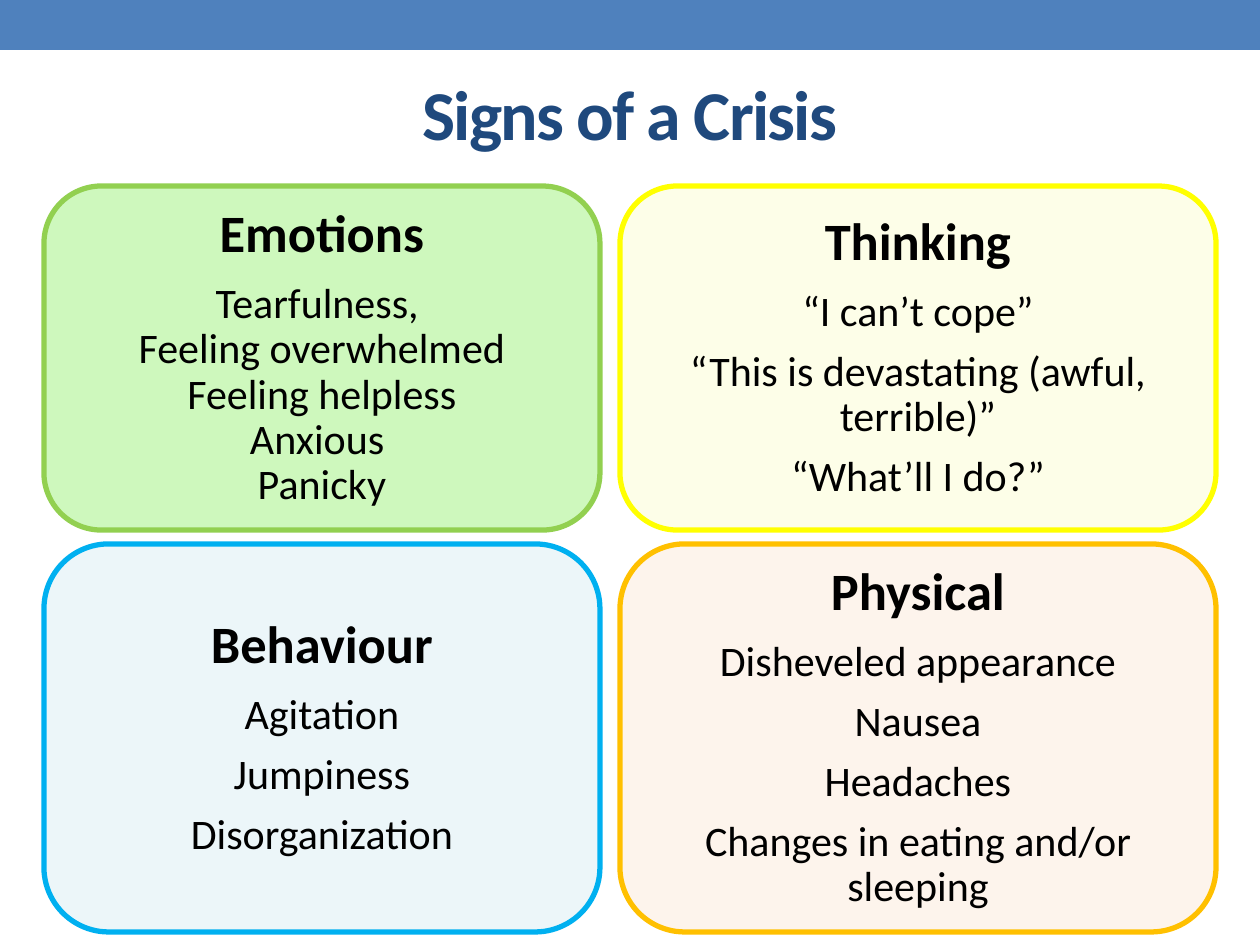
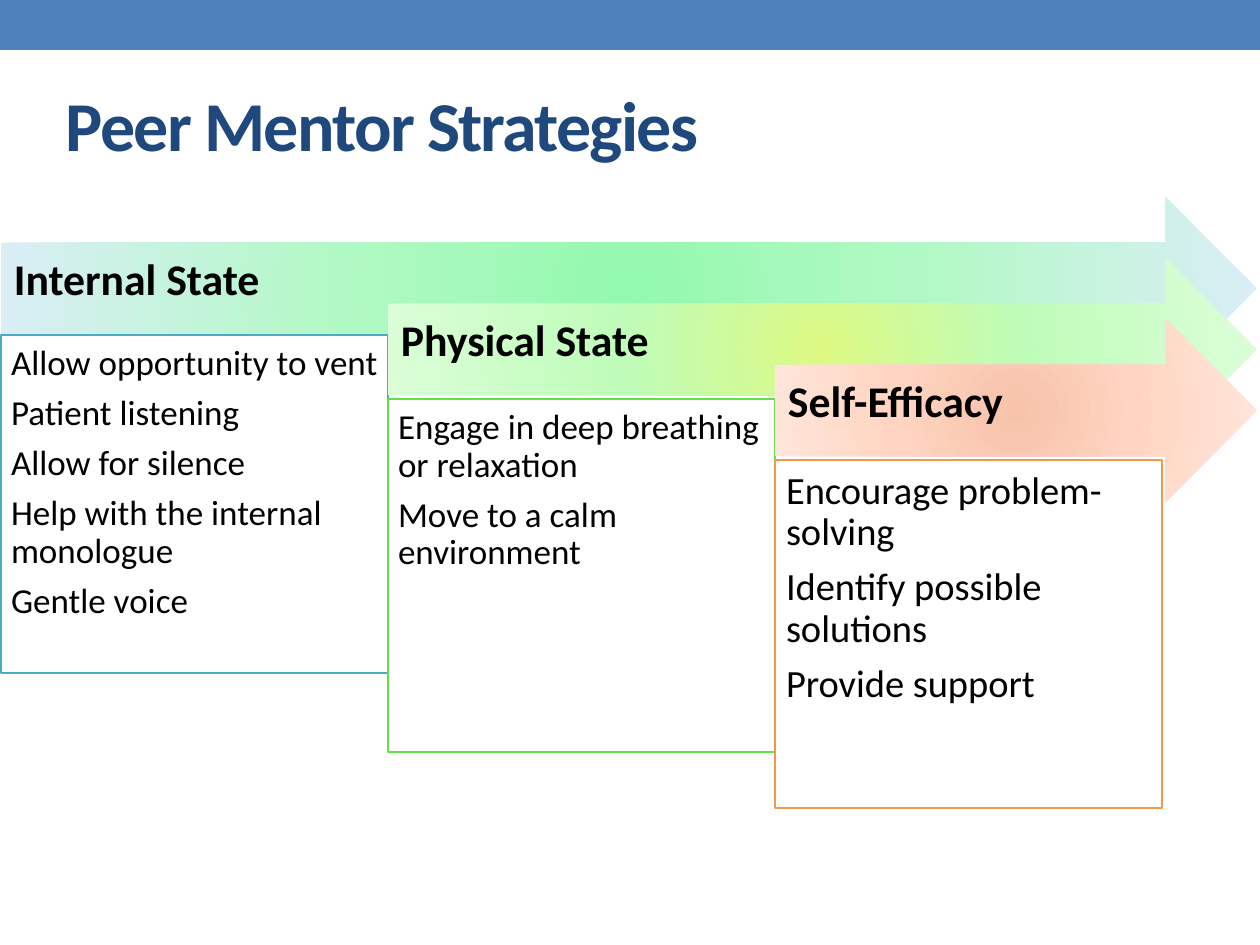
"""Build two slides on the signs of a crisis and peer mentor strategies."""
from pptx import Presentation
from pptx.dml.color import RGBColor
from pptx.enum.shapes import MSO_SHAPE
from pptx.enum.text import MSO_ANCHOR, PP_ALIGN
from pptx.oxml import parse_xml
from pptx.oxml.ns import nsdecls, qn
from pptx.util import Pt

RECT, ROUND, ARROW = MSO_SHAPE.RECTANGLE, MSO_SHAPE.ROUNDED_RECTANGLE, MSO_SHAPE.RIGHT_ARROW
LEFT, CENTER = PP_ALIGN.LEFT, PP_ALIGN.CENTER
TOP, MIDDLE = MSO_ANCHOR.TOP, MSO_ANCHOR.MIDDLE
FONT = "Calibri"
SCALE = 914400 / 126
WIDTH, HEIGHT, BAND_H = 1260, 945, 50

COLORS = {
    "band": "4F81BD", "title": "1F497D", "text": "000000", "white": "FFFFFF",
    "green": "9EF27C", "green_line": "92D050",
    "yellow": "FDFED2", "yellow_line": "FFFF00",
    "blue": "DBEEF4", "blue_line": "00B0F0",
    "orange": "FDEADA", "orange_line": "FFC000",
    "internal": "4BACC6", "physical": "60E146", "efficacy": "F79646",
}

SIGNS_TITLE = ("Signs of a Crisis", (63, 45, 1134, 136), CENTER)
SIGNS = [
    ("Emotions", "green", 0,
     ["Tearfulness, ", "Feeling overwhelmed", "Feeling helpless", "Anxious ", "Panicky"]),
    ("Thinking", "yellow", 0.35,
     ["“I can’t cope”", "“This is devastating (awful, terrible)”", "“What’ll I do?”"]),
    ("Behaviour", "blue", 0.35, ["Agitation", "Jumpiness", "Disorganization"]),
    ("Physical", "orange", 0.35,
     ["Disheveled appearance", "Nausea", "Headaches", "Changes in eating and/or sleeping"]),
]
SIGN_COLUMNS = [(44, 556), (620, 596)]
SIGN_ROWS = [(186, 344), (544, 388)]

STRATEGIES_TITLE = ("Peer Mentor Strategies", (53, 55, 1134, 136), LEFT)
STRATEGIES = [
    dict(head="Internal State", stops=("93F9AE", "B1F9C4", "DAEEF6"), line="internal",
         top=335, height=338, size=20,
         items=["Allow opportunity to vent", "Patient listening", "Allow for silence",
                "Help with the internal monologue", "Gentle voice"]),
    dict(head="Physical State", stops=("DDF983", "BFFCB9", "DBFED8"), line="physical",
         top=399, height=353, size=20,
         items=["Engage in deep breathing or relaxation", "Move to a calm environment"]),
    dict(head="Self-Efficacy", stops=("F6C2AA", "FFD4C0", "FFE7DD"), line="efficacy",
         top=460, height=348, size=22,
         items=["Encourage problem-solving", "Identify possible solutions", "Provide support"]),
]
STEP_X, STEP_Y = 387, 61
ARROW_X, ARROW_Y, ARROW_H, ARROW_RIGHT = 1, 197, 183, 1257


def px(value):
    return round(value * SCALE)


def rgb(name):
    return RGBColor.from_string(COLORS[name])


def add_shape(slide, kind, box, fill=None, line=None, weight=1):
    s = slide.shapes.add_shape(kind, *map(px, box))
    s.shadow.inherit = False
    if fill:
        s.fill.solid()
        s.fill.fore_color.rgb = rgb(fill)
    else:
        s.fill.background()
    if line:
        s.line.color.rgb = rgb(line)
        s.line.width = Pt(weight)
    else:
        s.line.fill.background()
    return s


def set_alpha(s, percent):
    color = s.fill._xPr.find(qn("a:solidFill"))[0]
    color.append(parse_xml(f'<a:alpha {nsdecls("a")} val="{percent * 1000}"/>'))


def set_radial(s, stops):
    marks = "".join(f'<a:gs pos="{pos}"><a:srgbClr val="{c}"/></a:gs>'
                    for pos, c in zip((0, 45000, 100000), stops))
    grad = parse_xml(
        f'<a:gradFill {nsdecls("a")} rotWithShape="1"><a:gsLst>{marks}</a:gsLst>'
        '<a:path path="circle"><a:fillToRect l="50000" t="50000" r="50000" b="50000"/>'
        '</a:path></a:gradFill>')
    sp_pr = s._element.spPr
    sp_pr.replace(sp_pr.find(qn("a:noFill")), grad)


def write(s, lines, anchor, align, insets, color="text", spacing=0.9):
    """Fill a shape with lines of (text, size, bold, gap as a share of size)."""
    tf = s.text_frame
    tf.word_wrap = True
    tf.vertical_anchor = anchor
    for side, inset in zip(("left", "top", "right", "bottom"), insets):
        setattr(tf, f"margin_{side}", px(inset))
    for i, (text, size, bold, gap) in enumerate(lines):
        p = tf.add_paragraph() if i else tf.paragraphs[0]
        for name, value in dict(alignment=align, line_spacing=spacing,
                                space_after=Pt(size * gap)).items():
            setattr(p, name, value)
        r = p.add_run()
        r.text = text
        for name, value in dict(name=FONT, size=Pt(size), bold=bold).items():
            setattr(r.font, name, value)
        r.font.color.rgb = rgb(color)
    return tf


def add_slide(prs, title, box, align):
    slide = prs.slides.add_slide(prs.slide_layouts[6])
    add_shape(slide, RECT, (0, 0, WIDTH, BAND_H), "band")
    s = slide.shapes.add_textbox(*map(px, box))
    tf = write(s, [(title, 40, True, 0)], MIDDLE, align, (13, 6, 13, 6), "title", 1.0)
    tf.paragraphs[0].runs[0].font._element.set("spc", "-100")
    return slide


def build_signs(prs):
    slide = add_slide(prs, *SIGNS_TITLE)
    for i, (head, color, gap, items) in enumerate(SIGNS):
        (top, height), (left, width) = SIGN_ROWS[i // 2], SIGN_COLUMNS[i % 2]
        s = add_shape(slide, ROUND, (left, top, width, height), color, f"{color}_line", 3)
        set_alpha(s, 50)
        lines = [(head, 30, True, 0.35)] + [(item, 24, False, gap) for item in items]
        write(s, lines, MIDDLE, CENTER, (38, 0, 38, 0))


def build_strategies(prs):
    slide = add_slide(prs, *STRATEGIES_TITLE)
    for i, step in enumerate(STRATEGIES):
        left = ARROW_X + i * STEP_X
        s = add_shape(slide, ARROW, (left, ARROW_Y + i * STEP_Y, ARROW_RIGHT - left, ARROW_H))
        set_radial(s, step["stops"])
        write(s, [(step["head"], 25, True, 0.35)], MIDDLE, LEFT, (13, 13, 13, 28))
        card = add_shape(slide, RECT, (left, step["top"], STEP_X, step["height"]),
                         "white", step["line"], 0.75)
        lines = [(item, step["size"], False, 0.35) for item in step["items"]]
        write(card, lines, TOP, LEFT, (step["size"] // 2,) * 4)


def main():
    prs = Presentation()
    prs.slide_width, prs.slide_height = px(WIDTH), px(HEIGHT)
    build_signs(prs)
    build_strategies(prs)
    prs.save("out.pptx")


if __name__ == "__main__":
    main()
